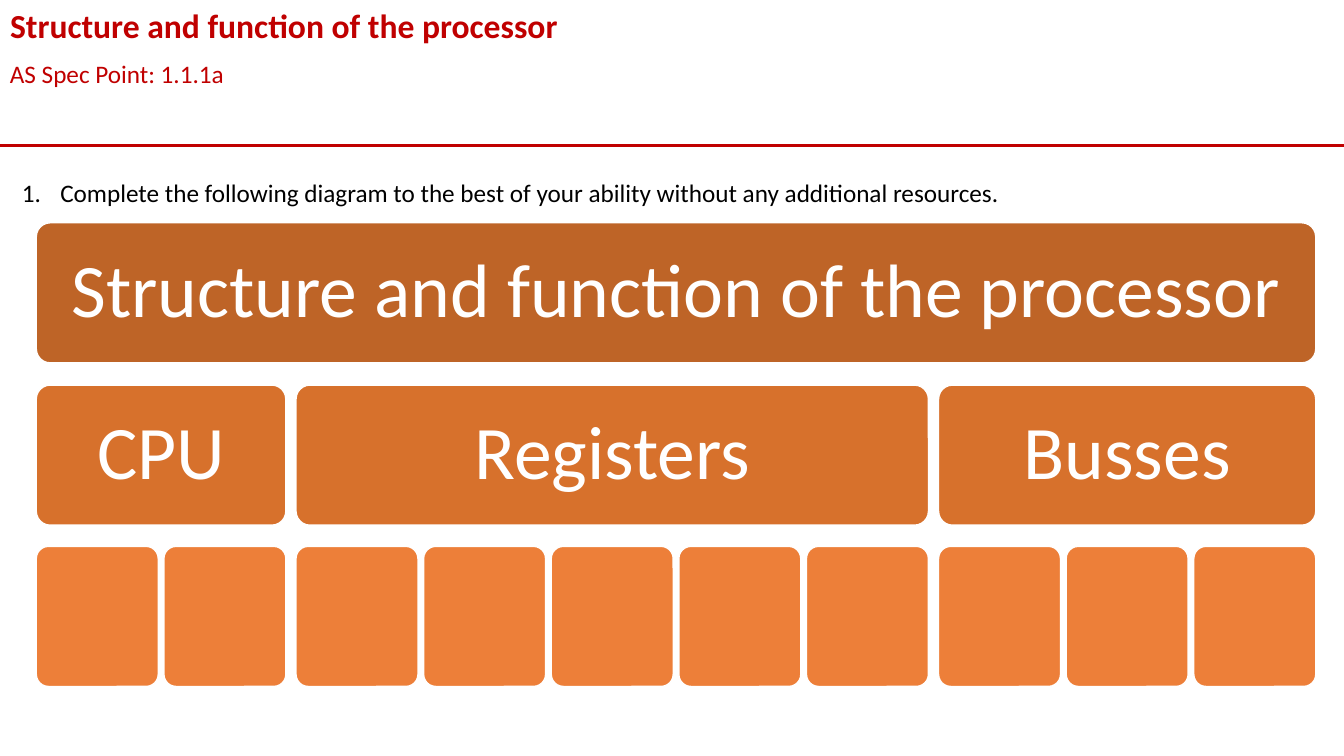
from pptx import Presentation
from pptx.dml.color import RGBColor
from pptx.enum.shapes import MSO_CONNECTOR, MSO_SHAPE
from pptx.enum.text import MSO_ANCHOR as ANCHOR, MSO_AUTO_SIZE as AUTO, PP_ALIGN as ALIGN
from pptx.oxml.ns import qn
from pptx.util import Inches, Pt
from lxml.etree import SubElement

RED = RGBColor(0xC0, 0x00, 0x00)
BLACK = RGBColor(0x00, 0x00, 0x00)
WHITE = RGBColor(0xFF, 0xFF, 0xFF)
DARK_ORANGE = RGBColor(0xBE, 0x64, 0x27)
MID_ORANGE = RGBColor(0xD7, 0x71, 0x2C)
LIGHT_ORANGE = RGBColor(0xED, 0x7F, 0x39)

TOPIC = "Structure and function of the processor"
SPEC_POINT = "AS Spec Point: 1.1.1a"
TASK = ("Complete the following diagram to the best of your ability "
        "without any additional resources.")
BRANCHES = [("CPU", 2), ("Registers", 5), ("Busses", 3)]

LEFT, WIDTH = 0.36, 12.69
ROW_TOPS = (2.21, 3.82, 5.42)
ROW_HEIGHT = 1.39
LEAF_WIDTH, BRANCH_GAP = 1.21, 0.1
LEAVES = sum(count for _, count in BRANCHES)
LEAF_GAP = ((WIDTH - LEAVES * LEAF_WIDTH - (len(BRANCHES) - 1) * BRANCH_GAP)
            / (LEAVES - len(BRANCHES)))


def apply(target, values):
    """Set each attribute named in values on the target."""
    for name, value in values.items():
        setattr(target, name, value)


def place(sp, left, top, width, height):
    """Position and size a shape in inches."""
    apply(sp, {"left": Inches(left), "top": Inches(top),
               "width": Inches(width), "height": Inches(height)})


def write(p, text, size, color, bold=False):
    """Put one formatted run in a paragraph."""
    r = p.add_run()
    r.text = text
    apply(r.font, {"name": "Calibri", "size": Pt(size), "bold": bold})
    r.font.color.rgb = color


def add_title(slide):
    """Fill the title placeholder at the top left."""
    sp = slide.shapes.title
    place(sp, 0, 0, 13.33, 0.5)
    tf = sp.text_frame
    apply(tf, {"word_wrap": True, "auto_size": AUTO.NONE, "vertical_anchor": ANCHOR.TOP})
    tf.paragraphs[0].alignment = ALIGN.LEFT
    write(tf.paragraphs[0], TOPIC, 24, RED, True)


def add_text(slide, left, top, width, text, color, wrap=True):
    """Add a one-line text box and return its paragraph."""
    box = slide.shapes.add_textbox(Inches(left), Inches(top), Inches(width), Inches(0.4))
    box.text_frame.word_wrap = wrap
    p = box.text_frame.paragraphs[0]
    write(p, text, 18, color)
    return p


def number(p):
    """Number a paragraph with a hanging indent."""
    ppr = p._p.get_or_add_pPr()
    ppr.set("marL", str(Inches(0.38)))
    ppr.set("indent", str(Inches(-0.38)))
    SubElement(ppr, qn("a:buAutoNum"), type="arabicPeriod")


def add_rule(slide):
    """Draw the rule below the heading."""
    line = slide.shapes.add_connector(
        MSO_CONNECTOR.STRAIGHT, 0, Inches(1.44), Inches(13.33), Inches(1.44))
    line.line.color.rgb = RED
    line.line.width = Pt(2.25)
    SubElement(line._element.spPr, qn("a:effectLst"))


def add_block(slide, left, row, width, fill, text=""):
    """Add a rounded block of the diagram in the given row."""
    sp = slide.shapes.add_shape(
        MSO_SHAPE.ROUNDED_RECTANGLE, Inches(left), Inches(ROW_TOPS[row]),
        Inches(width), Inches(ROW_HEIGHT))
    sp.shadow.inherit = False
    sp.adjustments[0] = 0.1
    sp.fill.solid()
    sp.fill.fore_color.rgb = fill
    sp.line.color.rgb = WHITE
    sp.line.width = Pt(1)
    if text:
        tf = sp.text_frame
        margins = dict.fromkeys(
            ("margin_left", "margin_top", "margin_right", "margin_bottom"), Inches(0.23))
        apply(tf, {"word_wrap": True, "vertical_anchor": ANCHOR.MIDDLE, **margins})
        p = tf.paragraphs[0]
        apply(p, {"alignment": ALIGN.CENTER, "line_spacing": 0.9})
        write(p, text, 54, WHITE)


def add_diagram(slide):
    """Stack the topic, its branches and their empty leaves."""
    add_block(slide, LEFT, 0, WIDTH, DARK_ORANGE, TOPIC)
    left = LEFT
    for name, count in BRANCHES:
        width = count * LEAF_WIDTH + (count - 1) * LEAF_GAP
        add_block(slide, left, 1, width, MID_ORANGE, name)
        for i in range(count):
            add_block(slide, left + i * (LEAF_WIDTH + LEAF_GAP), 2, LEAF_WIDTH, LIGHT_ORANGE)
        left += width + BRANCH_GAP


def main():
    """Build the slide and save it."""
    prs = Presentation()
    apply(prs, {"slide_width": Inches(13.33), "slide_height": Inches(7.5)})
    slide = prs.slides.add_slide(prs.slide_layouts[5])
    add_rule(slide)
    add_title(slide)
    add_text(slide, 0, 0.53, 13.33, SPEC_POINT, RED)
    number(add_text(slide, 0.12, 1.71, 10, TASK, BLACK, wrap=False))
    add_diagram(slide)
    prs.save("out.pptx")


if __name__ == "__main__":
    main()
